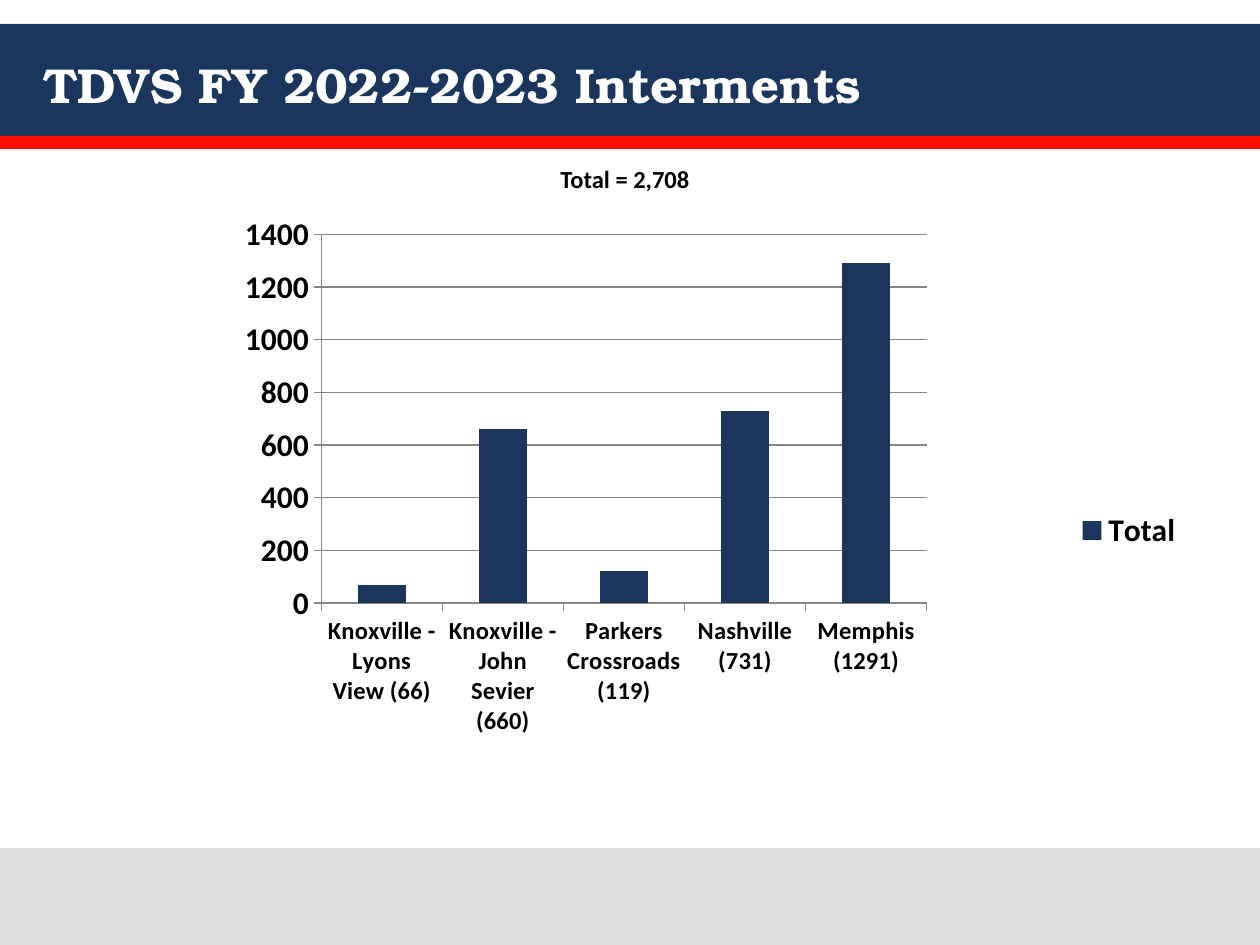
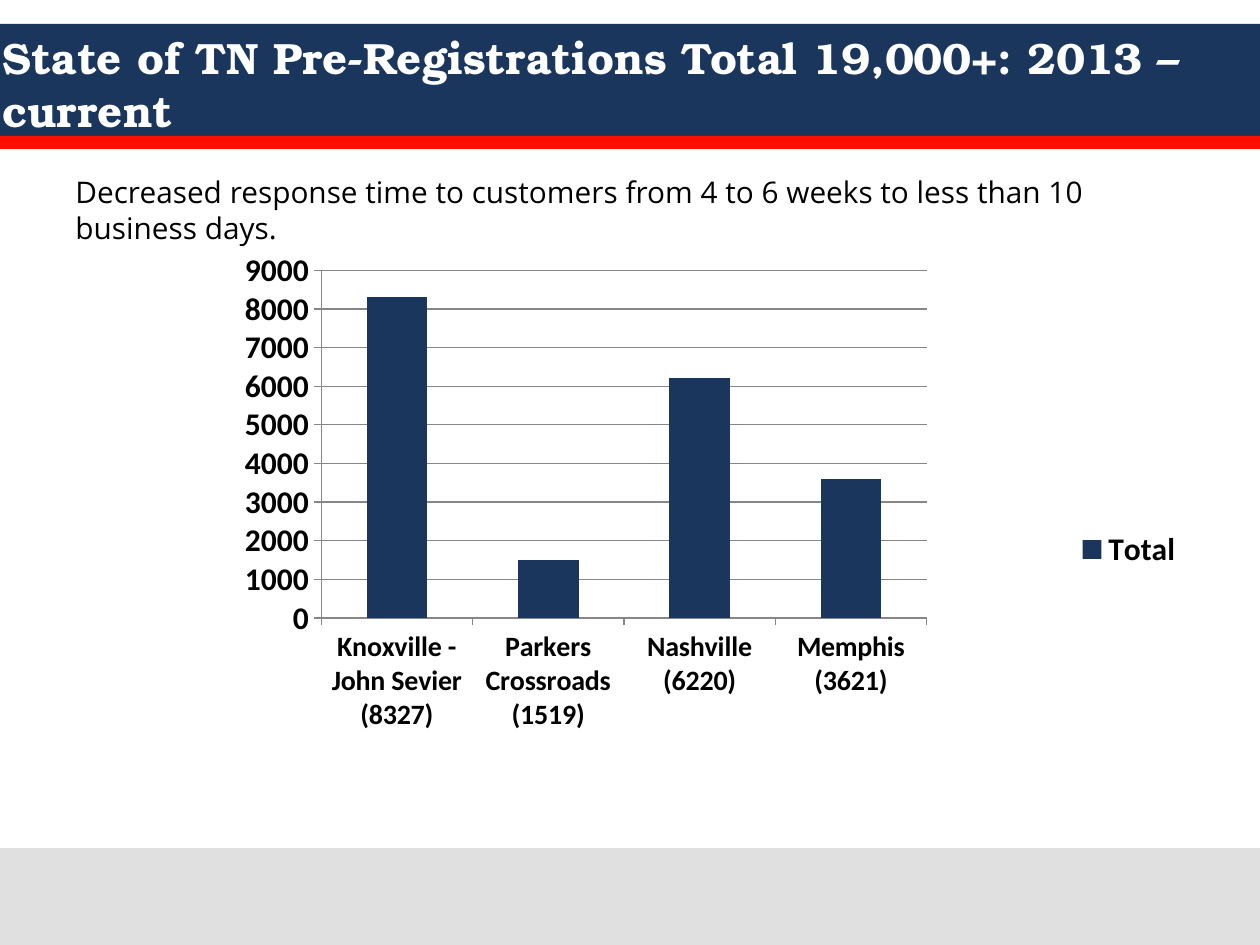
from lxml import etree
from pptx import Presentation
from pptx import util as u
from pptx.chart.data import CategoryChartData
from pptx.dml.color import RGBColor
from pptx.enum import chart as charts, shapes, text
from pptx.oxml import ns

PX = 914400 / 126
SLIDE_BOX = (0, 0, 1260, 945)
COLORS = {"navy": "1B365D", "red": "FF0F00", "footer": "E0E0E0",
          "white": "FFFFFF", "black": "000000", "rule": "868686"}
TITLE_FONT = {"name": "TeX Gyre Bonum", "bold": True}
CHART_FONT = {"name": "Calibri", "bold": True}
NOTE_FONT = {"name": "Open Sans", "bold": False}
PLOT_AREA = {"x": 0.149, "y": 0.052, "w": 0.589, "h": 0.558}


def emu(*lengths):
    return [u.Emu(round(length * PX)) for length in lengths]


def rgb(name):
    return RGBColor.from_string(COLORS[name])


def set_font(font, size, color="black", **values):
    for key, value in {"size": u.Pt(size), **values}.items():
        setattr(font, key, value)
    font.color.rgb = rgb(color)


def add_bands(layout, slide, box):
    """Draw the header and footer bands behind everything on the layout."""
    left, top, width, height = box
    bands = [("navy", 24, 112), ("red", 136, 13), ("footer", 848, height - 848)]
    for index, (color, offset, depth) in enumerate(bands):
        band = slide.shapes.add_shape(
            shapes.MSO_SHAPE.RECTANGLE, *emu(left, top + offset, width, depth))
        band.shadow.inherit = False
        band.fill.solid()
        band.fill.fore_color.rgb = rgb(color)
        band.line.fill.background()
        layout.shapes.element.insert(2 + index, band.element)


def set_title(slide, box, wording, size):
    title = slide.shapes.title
    title.left, title.top, title.width, title.height = emu(*box)
    frame = title.text_frame
    frame.text = wording
    frame.auto_size = text.MSO_AUTO_SIZE.NONE
    frame.vertical_anchor = text.MSO_ANCHOR.MIDDLE
    frame.paragraphs[0].alignment = text.PP_ALIGN.LEFT
    set_font(frame.paragraphs[0].runs[0].font, size, "white", **TITLE_FONT)


def add_note(slide, box, wording, size, font, align):
    frame = slide.shapes.add_textbox(*emu(*box)).text_frame
    frame.word_wrap = True
    frame.auto_size = text.MSO_AUTO_SIZE.SHAPE_TO_FIT_TEXT
    frame.text = wording
    frame.paragraphs[0].alignment = align
    set_font(frame.paragraphs[0].runs[0].font, size, **font)


def fix_plot_area(chart):
    """Pin the inner plot area to fixed fractions of the chart."""
    plot_area = chart.element.find(".//" + ns.qn("c:plotArea"))
    for old in plot_area.findall(ns.qn("c:layout")):
        plot_area.remove(old)
    layout = etree.Element(ns.qn("c:layout"))
    plot_area.insert(0, layout)
    manual = etree.SubElement(layout, ns.qn("c:manualLayout"))
    settings = {"layoutTarget": "inner", "xMode": "edge", "yMode": "edge", **PLOT_AREA}
    for key, value in settings.items():
        etree.SubElement(manual, ns.qn("c:" + key)).set("val", str(value))


def add_total_chart(slide, box, totals, label_size, digits):
    """Label each place with its exact count; plot the count rounded to digits."""
    data = CategoryChartData()
    data.categories = [f"{place} ({count})" for place, count in totals.items()]
    data.add_series("Total", [round(count, digits) for count in totals.values()])
    chart = slide.shapes.add_chart(
        charts.XL_CHART_TYPE.COLUMN_STACKED, *emu(*box), data).chart
    set_font(chart.font, 18, **CHART_FONT)
    chart.has_title = False
    chart.has_legend = True
    chart.legend.position = charts.XL_LEGEND_POSITION.RIGHT
    chart.legend.include_in_layout = False

    plot = chart.plots[0]
    for key, value in {"gap_width": 150, "overlap": 100, "vary_by_categories": False}.items():
        setattr(plot, key, value)
    bars = plot.series[0].format.fill
    bars.solid()
    bars.fore_color.rgb = rgb("navy")

    places, counts = chart.category_axis, chart.value_axis
    counts.has_major_gridlines = True
    for axis in (places, counts):
        axis.major_tick_mark = charts.XL_TICK_MARK.OUTSIDE
        axis.minor_tick_mark = charts.XL_TICK_MARK.NONE
    for part in (places, counts, counts.major_gridlines):
        part.format.line.color.rgb = rgb("rule")
        part.format.line.width = u.Pt(0.75)
    set_font(places.tick_labels.font, label_size, **CHART_FONT)
    fix_plot_area(chart)


def build_interments(slide):
    set_title(slide, (31, 27, 1218, 113), "TDVS FY 2022-2023 Interments", 28)
    totals = {"Knoxville - Lyons View": 66, "Knoxville - John Sevier": 660,
              "Parkers Crossroads": 119, "Nashville": 731, "Memphis": 1291}
    add_total_chart(slide, (168, 200, 1028, 661), totals, 14, -1)
    add_note(slide, (368, 158, 514, 43), "Total = 2,708", 14, CHART_FONT,
             text.PP_ALIGN.CENTER)


def build_registrations(slide):
    set_title(slide, (-10, 27, 1270, 113),
              "State of TN Pre-Registrations Total 19,000+: 2013 – current", 25)
    add_note(slide, (63, 168, 1155, 84),
             "Decreased response time to customers from 4 to 6 weeks "
             "to less than 10 business days.", 17, NOTE_FONT, text.PP_ALIGN.LEFT)
    totals = {"Knoxville - John Sevier": 8327, "Parkers Crossroads": 1519,
              "Nashville": 6220, "Memphis": 3621}
    add_total_chart(slide, (168, 238, 1028, 623), totals, 16, -2)


def main():
    deck = Presentation()
    deck.slide_width, deck.slide_height = emu(*SLIDE_BOX[2:])
    layout = deck.slide_layouts.get_by_name("Title Only")
    interments, registrations = (deck.slides.add_slide(layout) for _ in range(2))
    add_bands(layout, interments, SLIDE_BOX)
    build_interments(interments)
    build_registrations(registrations)
    deck.save("out.pptx")


if __name__ == "__main__":
    main()
